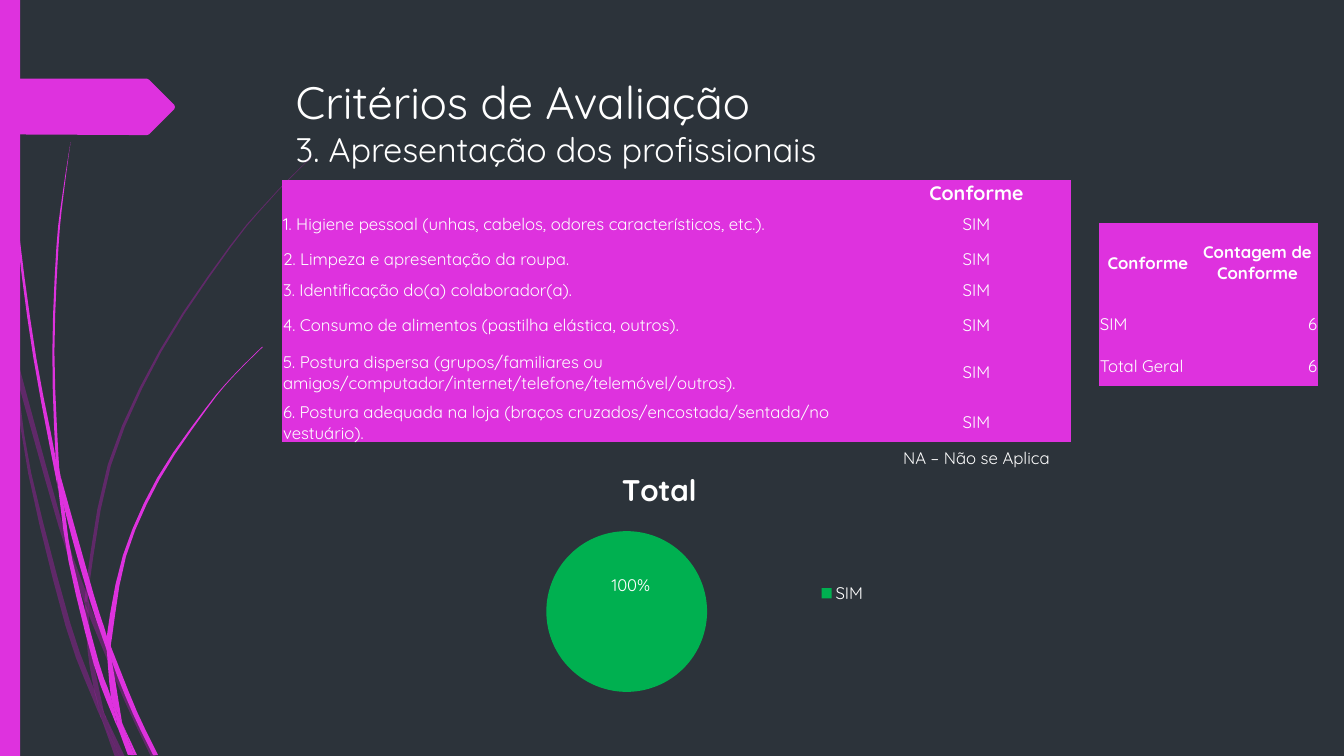
from lxml.etree import SubElement
from pptx import Presentation
from pptx.chart.data import CategoryChartData
from pptx.dml.color import RGBColor
from pptx.enum.chart import XL_CHART_TYPE as Kind
from pptx.enum.chart import XL_LABEL_POSITION as Spot, XL_LEGEND_POSITION as Side
from pptx.enum.shapes import MSO_SHAPE as Preset
from pptx.enum.text import MSO_ANCHOR as Anchor, MSO_AUTO_SIZE as Auto, PP_ALIGN as Align
from pptx.oxml.ns import qn
from pptx.util import Pt

FONT = "Quicksand"
DARK = RGBColor(0x2C, 0x33, 0x3A)
PINK = RGBColor(0xDE, 0x32, 0xDE)
PURPLE = RGBColor(0xB0, 0x1C, 0xB0)
GREEN = RGBColor(0x00, 0xB0, 0x50)
WHITE = RGBColor(0xFF, 0xFF, 0xFF)
PLAIN_STYLE = "{2D5ABB26-0587-4C30-8999-92F81FD0307C}"

TITLE = [("Critérios de Avaliação", 32.4), ("3. Apresentação dos profissionais", 24.3)]
NOTE = "NA – Não se Aplica"
CRITERIA = [
    "1. Higiene pessoal (unhas, cabelos, odores característicos, etc.).",
    "2. Limpeza e apresentação da roupa.",
    "3. Identificação do(a) colaborador(a).",
    "4. Consumo de alimentos (pastilha elástica, outros).",
    "5. Postura dispersa (grupos/familiares ou "
    "amigos/computador/internet/telefone/telemóvel/outros).",
    "6. Postura adequada na loja (braços cruzados/encostada/sentada/no vestuário).",
]
CHECKS = [("", "Conforme")] + [(item, "SIM") for item in CRITERIA]
COUNTS = [("Conforme", "Contagem de Conforme"), ("SIM", "6"), ("Total Geral", "6")]

# Blades of grass, each piece with its left and right edge
BACK = [
    ([(0, 203), (6.5, 231.8), (7.9, 252)], [(0, 215.3), (7.2, 247.7), (7.9, 252)]),
    ([(12.2, 270.7), (41.8, 375.8), (60.5, 431.3)],
     [(10.1, 248.4), (44.6, 374.4), (61.2, 421.9)]),
    ([(63.4, 439.2), (88.6, 499.7), (108, 540.7)],
     [(63.4, 429.1), (66.2, 437), (91.4, 498.2), (111.6, 540.7)]),
    ([(75.6, 511.9), (85.7, 540.7)], [(75.6, 511.9), (89.3, 540.7)]),
    ([(7.9, 252), (20.2, 338.4), (46.8, 447.1), (66.2, 499), (72.7, 514.1)],
     [(7.9, 252), (12.2, 270.7), (22.3, 337.7), (50.4, 445.7), (67, 491.8),
      (71.3, 509), (72.7, 514.1)]),
    ([(60.5, 431.3), (62.6, 465.1), (67, 491.8), (69.1, 498.2), (75.6, 511.9)],
     [(60.5, 431.3), (63.4, 439.2), (65.5, 465.1), (74.2, 508.3), (75.6, 511.9)]),
    ([(224.6, 110.2), (208.1, 126), (193, 141.8), (164.2, 175.7), (113.8, 250.6),
      (77, 331.9), (61.2, 420.5), (63.4, 429.1)],
     [(224.6, 110.2), (208.8, 126), (193, 142.6), (164.9, 176.4), (115.2, 251.3),
      (79.2, 332.6), (63.4, 420.5), (63.4, 429.1)]),
    ([(72.7, 514.1), (82.1, 540.7)], [(72.7, 514.1), (85.7, 540.7)]),
    ([(61.2, 421.9), (60.5, 431.3), (63.4, 439.2)],
     [(61.2, 421.9), (63.4, 429.1), (63.4, 439.2)]),
    ([(67, 491.8), (71.3, 509), (72.7, 514.1), (85.7, 540.7)],
     [(67, 491.8), (69.1, 498.2), (75.6, 511.9), (85.7, 540.7)]),
]
FRONT = [
    ([(2.2, 0), (2.9, 34.6), (5, 79.2), (12.2, 167.8), (23.8, 255.6), (40.3, 343.4),
      (41, 346.3)],
     [(2.9, 0), (3.6, 34.6), (5.8, 78.5), (13.7, 167.3), (25.9, 255.6), (39.6, 326.2),
      (41, 346.3)]),
    ([(43.2, 339.8), (46.1, 363.6), (63.4, 426.2), (76.3, 464.4)],
     [(43.2, 339.8), (67, 424.8), (76.3, 454.3), (76.3, 464.4)]),
    ([(79.2, 461.5), (79.9, 472.3), (95, 509.8), (109.4, 539.3)],
     [(79.2, 461.5), (81.4, 467.3), (97.9, 508.3), (113, 539.3)]),
    ([(41, 343.4), (49, 401), (67, 474.5), (79.9, 509.8), (84.2, 519.8)],
     [(41, 343.4), (46.1, 363.6), (51.8, 400.3), (70.6, 473), (79.2, 497.5),
      (84.2, 519.8)]),
    ([(50.4, 101.5), (44.6, 139), (40.3, 176.4), (37.4, 251.3), (39.6, 323.3),
      (43.2, 339.8)],
     [(50.4, 101.5), (45.4, 139), (41.8, 176.4), (38.9, 251.3), (41.8, 326.2),
      (43.2, 339.8)]),
    ([(87.8, 517.7), (95.8, 539.3)], [(87.8, 517.7), (97.9, 539.3)]),
    ([(39.6, 323.3), (41, 343.4), (46.1, 363.6)],
     [(39.6, 323.3), (43.2, 339.8), (46.1, 363.6)]),
    ([(187.2, 247.7), (166.3, 268.6), (146.9, 291.6), (112.3, 341.3), (87.8, 396.7),
      (76.3, 454.3), (79.2, 461.5)],
     [(187.9, 247.7), (166.3, 269.3), (147.6, 292.3), (113.8, 342.7), (90, 397.4),
      (79.9, 455.8), (79.2, 461.5)]),
    ([(84.2, 519.8), (91.4, 539.3)], [(84.2, 519.8), (94.3, 539.3)]),
    ([(76.3, 464.4), (79.2, 497.5), (83.5, 508.3), (87.8, 517.7)],
     [(76.3, 464.4), (79.9, 472.3), (87.1, 515.5), (87.8, 517.7)]),
    ([(76.3, 454.3), (76.3, 464.4), (79.9, 472.3)],
     [(76.3, 454.3), (79.2, 461.5), (79.9, 472.3)]),
    ([(79.2, 497.5), (83.5, 516.2), (84.2, 519.8), (93.6, 539.3)],
     [(79.2, 497.5), (83.5, 508.3), (87.8, 517.7), (95.8, 539.3)]),
]
ARROW = [(0, 56.2), (105, 56.2), (106.5, 57), (124.5, 75), (125, 76.5), (124.5, 78),
         (106.5, 96), (105, 96.5), (0, 96)]


def smooth(knots, steps=3):
    """Points of a Catmull-Rom curve through the knots."""
    ends = [knots[0], *knots, knots[-1]]
    curve = [knots[0]]
    for a, b, c, d in zip(ends, ends[1:], ends[2:], ends[3:]):
        for t in [step / steps for step in range(1, steps + 1)]:
            curve.append(tuple(
                (2 * q + (r - p) * t + (2 * p - 5 * q + 4 * r - s) * t ** 2
                 + (3 * q - p - 3 * r + s) * t ** 3) / 2
                for p, q, r, s in zip(a, b, c, d)))
    return curve


def paint(shape, color, alpha=100):
    shape.shadow.inherit = False
    shape.fill.solid()
    shape.fill.fore_color.rgb = color
    shape.line.fill.background()
    if alpha < 100:
        tint = next(shape.element.spPr.iter(qn("a:srgbClr")))
        SubElement(tint, qn("a:alpha"), val=str(alpha * 1000))


def outline(points, color, alpha=100):
    fine = [(Pt(x), Pt(y)) for x, y in points]
    pen = slide.shapes.build_freeform(*fine[0])
    pen.add_line_segments(fine[1:], close=True)
    paint(pen.convert_to_shape(), color, alpha)


def style(font, size, bold=False):
    font.name, font.size, font.bold = FONT, Pt(size), bold
    font.color.rgb = WHITE


def write(para, text, size, bold=False):
    run = para.add_run()
    run.text = text
    style(run.font, size, bold)


def grid(rows, left, top, widths, heights, head, align):
    """Add a table with a bold centred head row; align is for the last column."""
    frame = slide.shapes.add_table(len(rows), len(widths), Pt(left), Pt(top),
                                   Pt(sum(widths)), Pt(sum(heights)))
    next(frame.element.iter(qn("a:tableStyleId"))).text = PLAIN_STYLE
    table = frame.table
    for col, width in zip(table.columns, widths):
        col.width = Pt(width)
    for r, (row, height) in enumerate(zip(rows, heights)):
        table.rows[r].height = Pt(height)
        for c, text in enumerate(row):
            cell = table.cell(r, c)
            cell.fill.solid()
            cell.fill.fore_color.rgb = PINK
            cell.vertical_anchor = Anchor.MIDDLE
            cell.margin_left = cell.margin_right = cell.margin_top = Pt(0.7)
            cell.margin_bottom = Pt(0)
            para = cell.text_frame.paragraphs[0]
            para.alignment = Align.CENTER if r == 0 else align if c else Align.LEFT
            if text:
                write(para, text, 12 if r else head, r == 0)
    for p in frame.element.iter(qn("a:p")):
        if p.find(qn("a:r")) is None:
            SubElement(p, qn("a:endParaRPr"), sz="1200")


def place(parent, index, **spots):
    """Insert a manual chart layout into parent."""
    layout = SubElement(parent, qn("c:layout"))
    parent.insert(index, layout)
    manual = SubElement(layout, qn("c:manualLayout"))
    for tag, val in spots.items():
        SubElement(manual, qn("c:" + tag), val=str(val))


deck = Presentation()
deck.slide_width, deck.slide_height = Pt(960), Pt(540)
slide = deck.slides.add_slide(deck.slide_layouts[5])
slide.background.fill.solid()
slide.background.fill.fore_color.rgb = DARK

for blades, color, alpha in [(BACK, PURPLE, 40), (FRONT, PINK, 100)]:
    for left, right in blades:
        outline(smooth(left) + smooth(right)[::-1], color, alpha)
paint(slide.shapes.add_shape(Preset.RECTANGLE, 0, 0, Pt(14.4), Pt(540)), PINK)
outline(ARROW, PINK)

title = slide.shapes.title
title.left, title.top, title.width, title.height = Pt(204), Pt(49), Pt(702), Pt(101)
body = title.text_frame
body.auto_size, body.word_wrap, body.vertical_anchor = Auto.NONE, True, Anchor.TOP
para = body.paragraphs[0]
para.alignment = Align.LEFT
for n, (text, size) in enumerate(TITLE):
    if n:
        para.add_line_break()
    write(para, text, size)

note = slide.shapes.add_textbox(Pt(638), Pt(316), Pt(128), Pt(22)).text_frame
note.word_wrap = False
write(note.paragraphs[0], NOTE, 12)

grid(CHECKS, 201.5, 128.5, [428.5, 135], [16.6, 27.4, 22.3, 23, 26.6, 41, 21.6],
     14, Align.CENTER)
grid(COUNTS, 785, 159.5, [70, 86.5], [56, 31, 29], 12, Align.RIGHT)

data = CategoryChartData()
data.categories = ["SIM"]
data.add_series("Total", [100])
chart = slide.shapes.add_chart(Kind.PIE, Pt(315.5), Pt(323), Pt(311), Pt(201.5), data).chart
style(chart.font, 10)
chart.has_title = True
write(chart.chart_title.text_frame.paragraphs[0], "Total", 21.3, True)
chart.has_legend = True
chart.legend.position = Side.RIGHT
chart.legend.include_in_layout = False
style(chart.legend.font, 12)
chart.plots[0].vary_by_categories = True
point = chart.plots[0].series[0].points[0]
point.format.fill.solid()
point.format.fill.fore_color.rgb = GREEN
style(point.data_label.font, 12)
point.data_label.position = Spot.INSIDE_END
label = next(chart.element.iter(qn("c:dLbl")))
label.find(qn("c:showVal")).set("val", "0")
label.find(qn("c:showPercent")).set("val", "1")
place(label, 1, x=0.01, y=-0.32)

area = next(chart.element.iter(qn("c:plotArea")))
for old in area.findall(qn("c:layout")):
    area.remove(old)
place(area, 0, layoutTarget="inner", xMode="edge", yMode="edge", x=0.24, y=0.28, w=0.37, h=0.57)

deck.save("out.pptx")
